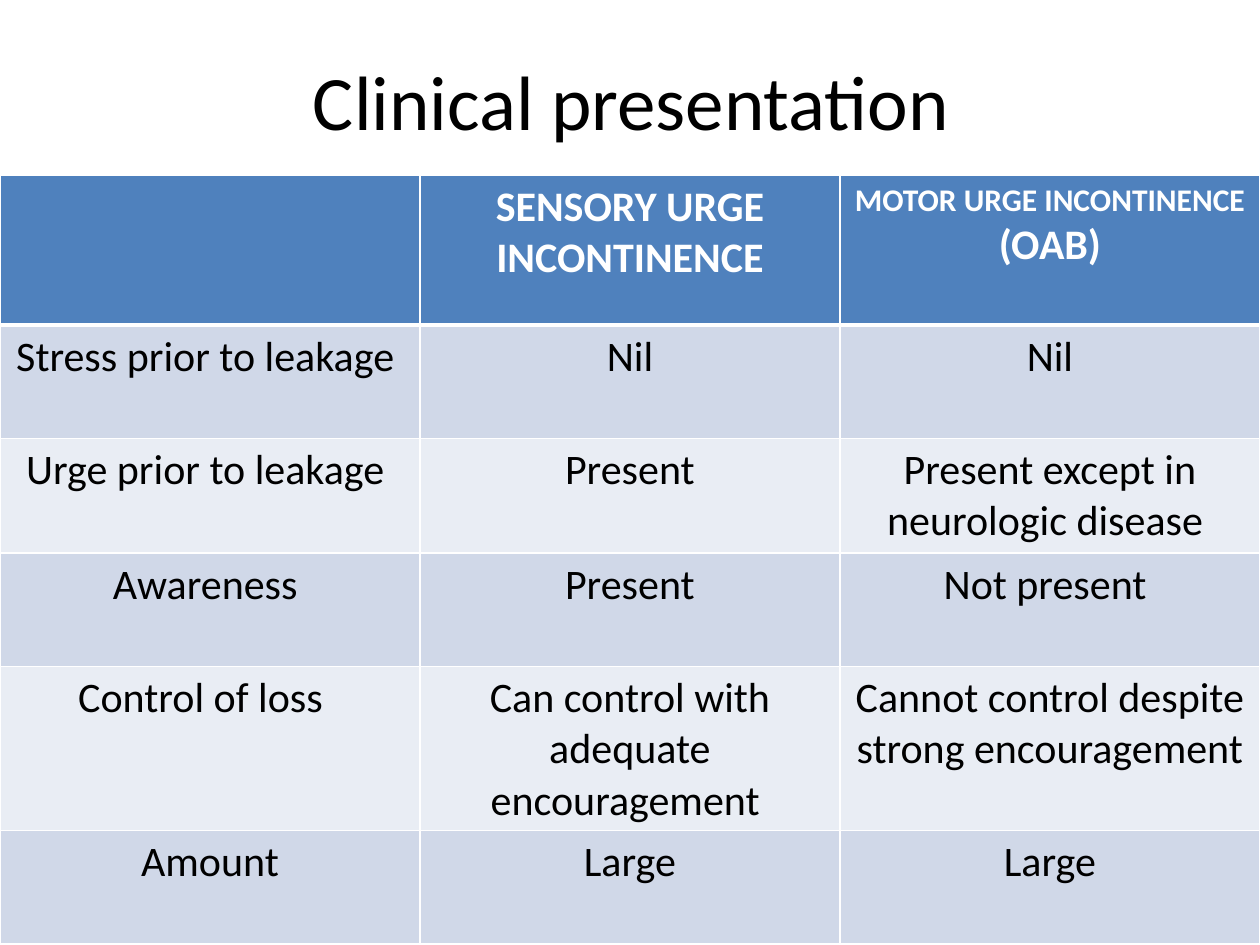
import dataclasses

import pptx
import pptx.dml.color
import pptx.enum.text
import pptx.oxml
import pptx.oxml.ns
import pptx.util

Inches = pptx.util.Inches
Pt = pptx.util.Pt
Color = pptx.dml.color.RGBColor.from_string
CENTER = pptx.enum.text.PP_ALIGN.CENTER
MIDDLE = pptx.enum.text.MSO_ANCHOR.MIDDLE


@dataclasses.dataclass(frozen=True)
class Theme:
    font: str = "Calibri"
    dark: str = "000000"
    light: str = "FFFFFF"
    head: str = "4F81BD"
    bands: tuple[str, str] = ("D0D8E8", "E9EDF4")
    title: int = 44
    body: int = 24
    small: int = 18
    thin: int = 1
    thick: int = 3


@dataclasses.dataclass(frozen=True)
class Row:
    height: float
    cells: tuple[str, str, str]


THEME = Theme()
ROWS = (
    Row(1.19, ("", "SENSORY URGE INCONTINENCE", "MOTOR URGE INCONTINENCE\n(OAB)")),
    Row(0.9, ("Stress prior to leakage ", "Nil", "Nil")),
    Row(0.91, ("Urge prior to leakage ", "Present", "Present except in neurologic disease ")),
    Row(0.9, ("Awareness ", "Present", "Not present ")),
    Row(1.29, ("Control of loss  ", "Can control with adequate encouragement ",
               "Cannot control despite strong encouragement")),
    Row(0.9, ("Amount", "Large", "Large")),
)


def style(par, size: int, color: str, bold: bool = False) -> None:
    par.alignment = CENTER
    for run in par.runs:
        run.font.name = THEME.font
        run.font.size = Pt(size)
        run.font.bold = bold
        run.font.color.rgb = Color(color)


def edge(cell, side: str, width: int) -> None:
    line = pptx.oxml.parse_xml(
        f'<a:ln{side} {pptx.oxml.ns.nsdecls("a")} w="{Pt(width)}">'
        f'<a:solidFill><a:srgbClr val="{THEME.light}"/></a:solidFill></a:ln{side}>'
    )
    cell._tc.get_or_add_tcPr().append(line)


def draw_cell(cell, text: str, index: int) -> None:
    head = index == 0
    for side in "LRTB":
        rule = (index, side) in ((0, "B"), (1, "T"))
        edge(cell, side, THEME.thick if rule else THEME.thin)
    cell.fill.solid()
    cell.fill.fore_color.rgb = Color(THEME.head if head else THEME.bands[(index - 1) % 2])
    cell.text_frame.text = text
    for par in cell.text_frame.paragraphs:
        size = THEME.small if par.text.startswith("MOTOR") else THEME.body
        style(par, size, THEME.light if head else THEME.dark, head)


def draw_title(slide, text: str) -> None:
    box = slide.shapes.add_textbox(Inches(0.58), Inches(0.25), Inches(9), Inches(1.08))
    frame = box.text_frame
    frame.word_wrap = True
    frame.vertical_anchor = MIDDLE
    frame.text = text
    style(frame.paragraphs[0], THEME.title, THEME.dark)


def draw_table(slide, rows: tuple[Row, ...]) -> None:
    height = sum(row.height for row in rows)
    table = slide.shapes.add_table(
        len(rows), len(rows[0].cells), Inches(0), Inches(1.39), Inches(10), Inches(height)
    ).table
    for index, row in enumerate(rows):
        table.rows[index].height = Inches(row.height)
        for cell, text in zip(table.rows[index].cells, row.cells):
            draw_cell(cell, text, index)


def main() -> None:
    deck = pptx.Presentation()
    deck.slide_width, deck.slide_height = Inches(10), Inches(7.5)
    slide = deck.slides.add_slide(deck.slide_layouts[6])
    draw_title(slide, "Clinical presentation ")
    draw_table(slide, ROWS)
    deck.save("out.pptx")


if __name__ == "__main__":
    main()
